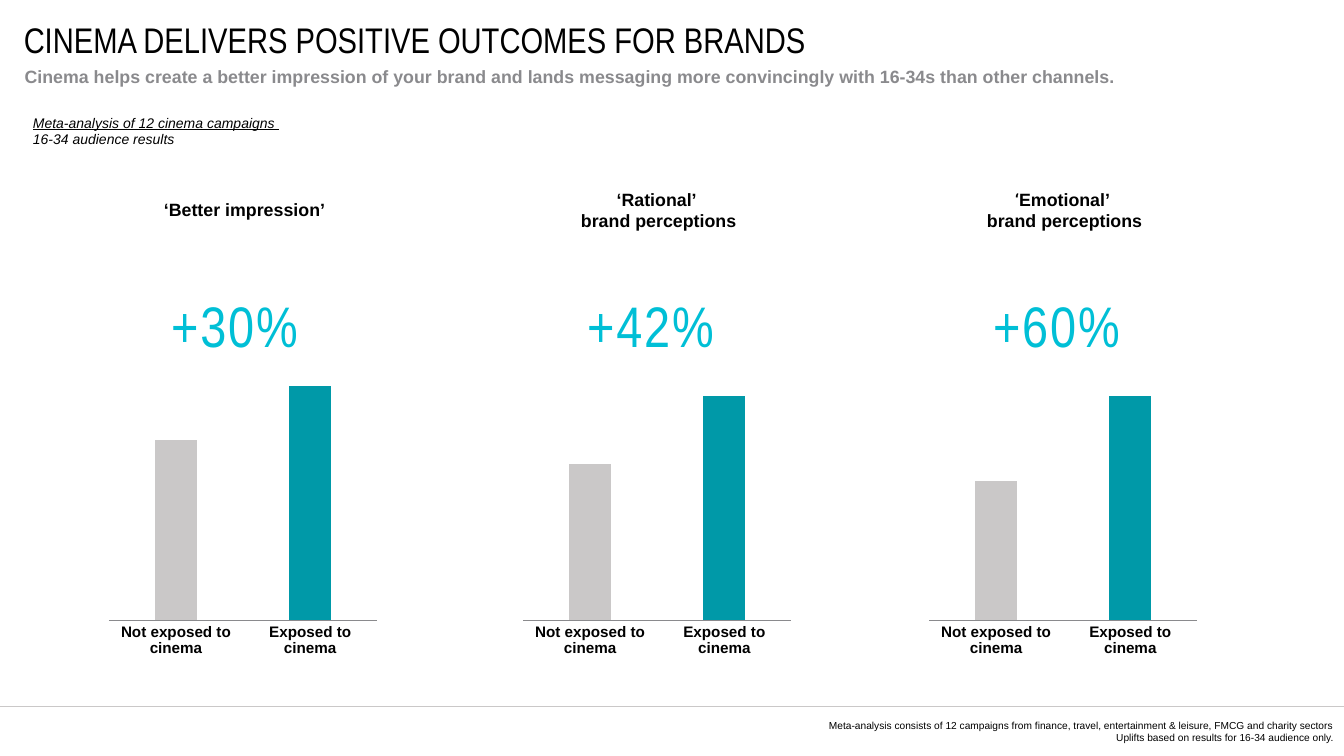
from lxml import etree
from pptx import Presentation
from pptx.chart.data import CategoryChartData as Data
from pptx.dml.color import RGBColor
from pptx.enum.chart import XL_CHART_TYPE as Kind, XL_TICK_MARK as Tick
from pptx.enum.shapes import MSO_CONNECTOR as Link
from pptx.enum.text import MSO_ANCHOR as Anchor, MSO_AUTO_SIZE as Fit, PP_ALIGN as Align
from pptx.oxml import parse_xml
from pptx.oxml.ns import nsdecls, qn
from pptx.util import Inches, Pt

BLACK, GREY, PALE, CYAN, TEAL = "000000", "8A8A8D", "CAC8C8", "00BFD6", "0099A8"
COLS, ROWS = 147, 82.7
CELL = 0.1
GROUPS = ("Not exposed to cinema", "Exposed to cinema")


def color(code):
    return RGBColor.from_string(code)


def grid(*cells):
    """Turn column or row counts into lengths."""
    return [Inches(n * CELL) for n in cells]


def style(font, size, code=BLACK, face="Arial", bold=False, slant=False):
    font.size, font.name = Pt(size), face
    font.bold, font.italic = bold, slant
    font.color.rgb = color(code)


class Page:
    def __init__(self, deck):
        deck.slide_width, deck.slide_height = grid(COLS, ROWS)
        self.slide = deck.slides.add_slide(deck.slide_layouts[5])
        self.shapes = self.slide.shapes

    def title(self, text, box):
        shape = self.shapes.title
        shape.left, shape.top, shape.width, shape.height = grid(*box)
        self.fill(shape.text_frame, text, 28, face="Arial Narrow", inset=False)
        shape.text_frame.word_wrap = False
        shape.text_frame.vertical_anchor = Anchor.MIDDLE

    def fill(self, frame, text, size, code=BLACK, align=Align.LEFT, inset=True, **look):
        frame.text = text
        frame.word_wrap = True
        frame.auto_size = Fit.NONE
        if not inset:
            frame.margin_left = frame.margin_right = 0
            frame.margin_top = frame.margin_bottom = 0
        for para in frame.paragraphs:
            para.alignment = align
            for run in para.runs:
                style(run.font, size, code, **look)

    def text(self, text, box, size, grow=False, **look):
        frame = self.shapes.add_textbox(*grid(*box)).text_frame
        self.fill(frame, text, size, **look)
        if grow:
            frame.auto_size = Fit.SHAPE_TO_FIT_TEXT
        return frame

    def rule(self, row):
        line = self.shapes.add_connector(Link.STRAIGHT, *grid(0, row, COLS, row))
        line.line.color.rgb, line.line.width = color(PALE), Pt(0.5)
        etree.SubElement(line._element.spPr, qn("a:effectLst"))

    def chart(self, vals, top, box):
        """Draw one pair of bars on a hidden scale that ends at top."""
        data = Data()
        data.categories = GROUPS
        data.add_series("Series 1", vals)
        chart = self.shapes.add_chart(Kind.COLUMN_CLUSTERED, *grid(*box), data).chart
        chart.has_legend = chart.has_title = False
        style(chart.font, 10, CYAN)

        scale = chart.value_axis
        scale.visible = scale.has_major_gridlines = False
        scale.minimum_scale, scale.maximum_scale = 0, top
        axis = chart.category_axis
        axis.major_tick_mark = axis.minor_tick_mark = Tick.NONE
        axis.format.line.color.rgb = color(GREY)
        axis.format.line.width = Pt(0.75)
        style(axis.tick_labels.font, 12, bold=True)

        plot = chart.plots[0]
        plot.gap_width, plot.overlap, plot.vary_by_categories = 219, -27, False
        for i, code in enumerate((PALE, TEAL)):
            bar = plot.series[0].points[i].format.fill
            bar.solid()
            bar.fore_color.rgb = color(code)
        self.inner(chart, x=0.02, y=0.18, w=0.95, h=0.7)

    def inner(self, chart, **place):
        """Fix the plot area as shares of the chart."""
        area = chart._chartSpace.find(".//" + qn("c:plotArea"))
        for old in area.findall(qn("c:layout")):
            area.remove(old)
        modes = "".join(f'<c:{k}Mode val="edge"/>' for k in "xy")
        sizes = "".join(f'<c:{k} val="{v}"/>' for k, v in place.items())
        area.insert(0, parse_xml(
            f'<c:layout {nsdecls("c")}><c:manualLayout><c:layoutTarget val="inner"/>'
            f'{modes}{sizes}</c:manualLayout></c:layout>'))

    def panel(self, left, head, gain, spot, vals, top):
        """Draw a heading, its uplift and its chart in one column."""
        self.chart(vals, top, (left, 33.2, 30.9, 39.4))
        frame = self.text(head, (left, 18.6, 30.9, 8.7), 14,
                          align=Align.CENTER, bold=True)
        frame.vertical_anchor = Anchor.MIDDLE
        uplift = self.text(gain, (*spot, 14.1), 45, code=CYAN,
                           face="Arial Narrow", align=Align.CENTER, inset=False)
        uplift.paragraphs[0].runs[0].font._element.set("spc", "150")
        return frame


def main():
    deck = Presentation()
    page = Page(deck)
    page.rule(77.3)
    page.title("CINEMA DELIVERS POSITIVE OUTCOMES FOR BRANDS", (2.6, 2.1, 135.8, 4.5))
    page.text("Cinema helps create a better impression of your brand and lands messaging "
              "more convincingly with 16-34s than other channels.",
              (1.7, 6.7, 122.6, 3.4), 14, grow=True, code=GREY, bold=True)

    note = page.text("Meta-analysis of 12 cinema campaigns \n16-34 audience results",
                     (3.6, 12.5, 60.6, 3.7), 11, grow=True, inset=False, slant=True)
    note.paragraphs[0].runs[0].font.underline = True

    panels = (
        (11.3, "‘Better impression’", "+30%", (11.3, 31.8, 28.7), (77, 100), 107.6),
        (56.6, "‘Rational’ \vbrand perceptions", "+42%", (55.7, 31.8, 30.9), (70, 100), 112.5),
        (101, "‘\vbrand perceptions", "+60%", (100.1, 31.8, 30.9), (62, 100), 112.5),
    )
    for item in panels:
        head = page.panel(*item)

    para = head.paragraphs[0]
    quote = para.runs[0]
    style(quote.font, 13.2, face="Roboto", bold=True)
    word = para.add_run()
    word.text = "Emotional’ "
    style(word.font, 14, bold=True)
    quote._r.addnext(word._r)

    page.text("Meta-analysis consists of 12 campaigns from finance, travel, entertainment "
              "& leisure, FMCG and charity sectors\n"
              "Uplifts based on results for 16-34 audience only.",
              (33.9, 78.7, 112, 2.7), 8, grow=True, align=Align.RIGHT, inset=False)
    deck.save("out.pptx")


if __name__ == "__main__":
    main()
